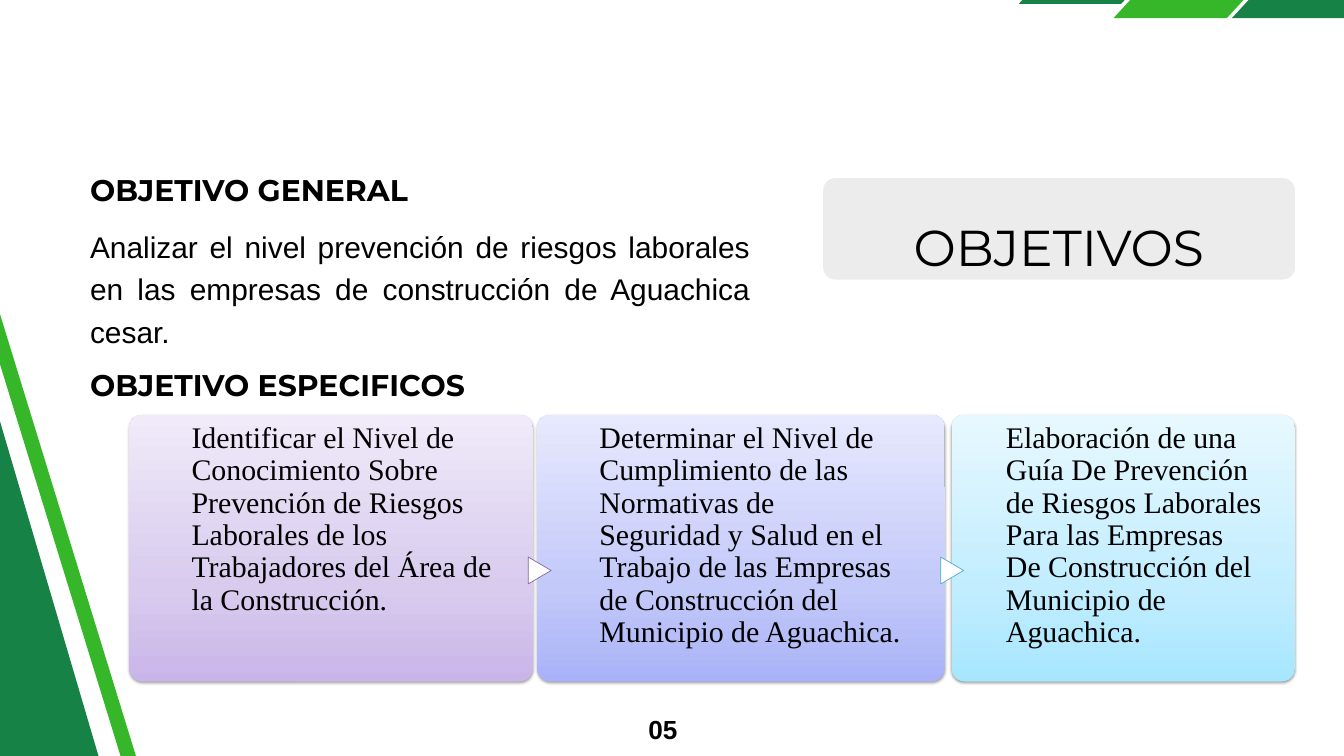
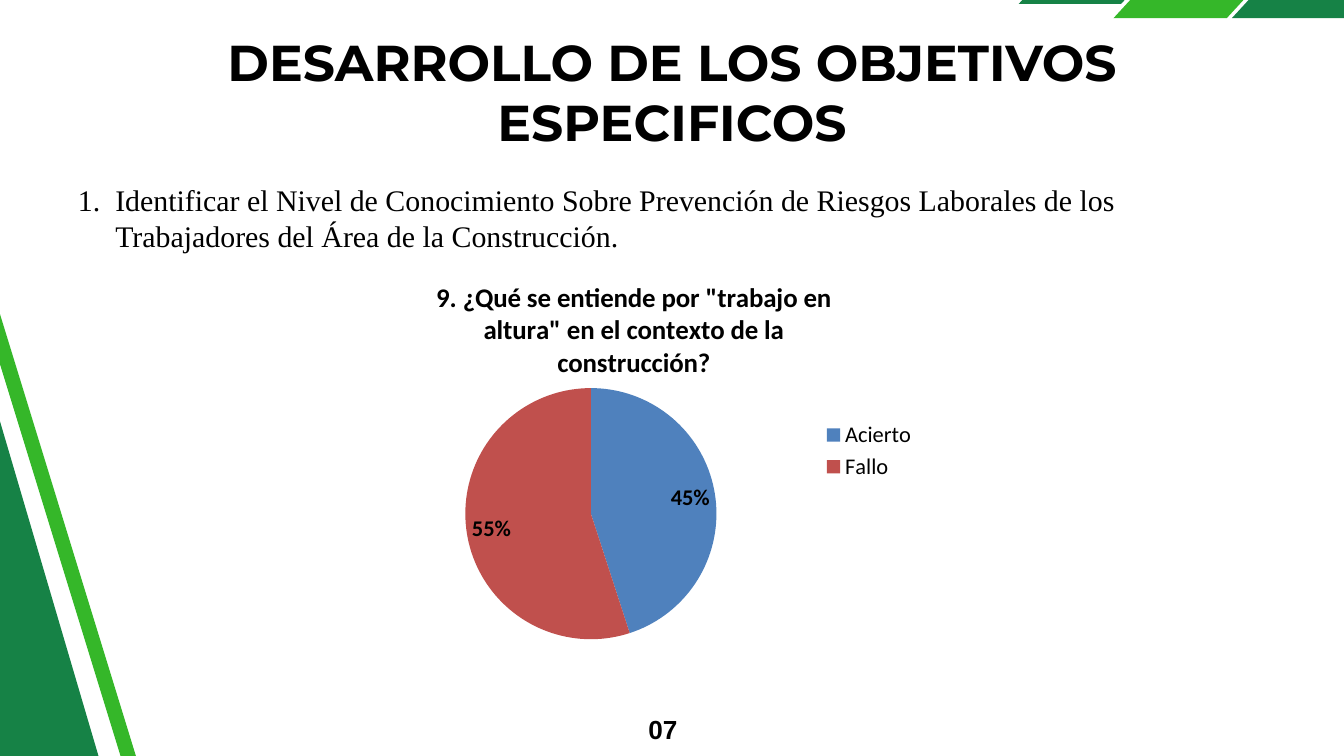
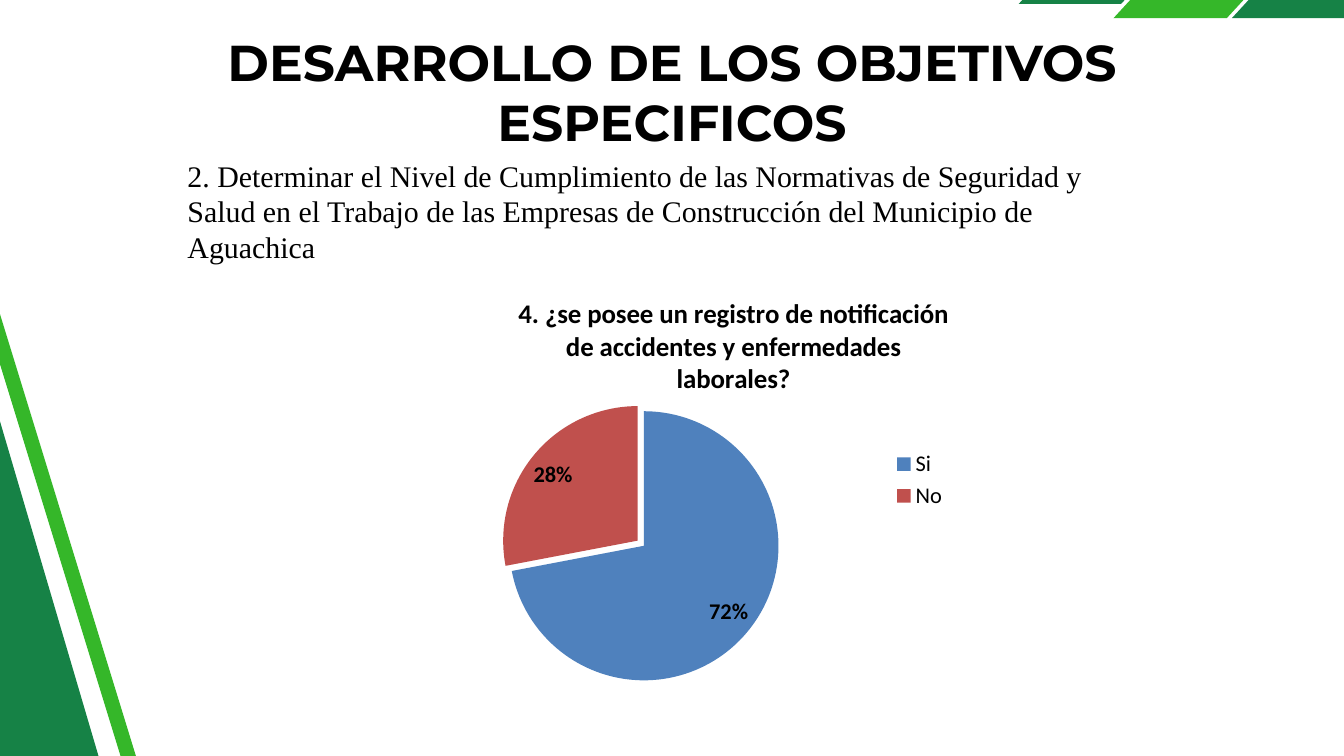
from lxml import etree
from pptx import Presentation
from pptx.chart.data import CategoryChartData
from pptx.dml.color import RGBColor
from pptx.enum import chart as charts, shapes, text
from pptx.oxml.ns import qn
from pptx.util import Pt

# Shared look
DARK_GREEN = RGBColor(0x16, 0x82, 0x46)
GREEN = RGBColor(0x35, 0xB7, 0x29)
GREY = RGBColor(0xED, 0xEC, 0xED)
BLACK = RGBColor(0, 0, 0)
WHITE = RGBColor(0xFF, 0xFF, 0xFF)
PURPLE = RGBColor(0x80, 0x64, 0xA2)
AQUA = RGBColor(0x4B, 0xAC, 0xC6)
SLICE_COLORS = [RGBColor(0x4F, 0x81, 0xBD), RGBColor(0xC0, 0x50, 0x4D)]

SHAPE = shapes.MSO_SHAPE
ALIGN = text.PP_ALIGN
TITLE = {"name": "Montserrat", "size": Pt(54), "bold": True}
PANEL_TITLE = {"name": "Montserrat", "size": Pt(54)}
HEADING = {"name": "Montserrat", "size": Pt(32), "bold": True}
BODY = {"name": "Arial", "size": Pt(32)}
SERIF = {"name": "Times New Roman", "size": Pt(32)}
PAGE_NUMBER = {"name": "Arial", "size": Pt(28), "bold": True}
CHART_TEXT = {"name": "Calibri", "size": Pt(24)}
CHART_TITLE = {"name": "Calibri", "size": Pt(28.8), "bold": True}
CHART_LABEL = {"name": "Calibri", "size": Pt(24), "bold": True}

# Decoration: shape, box, rotation, colour
BANDS = [
    (SHAPE.PARALLELOGRAM, (1091.5, -62, 170.6, 66.2), 0, DARK_GREEN),
    (SHAPE.PARALLELOGRAM, (1193, -76.3, 209.5, 95.8), 0, GREEN),
    (SHAPE.PARALLELOGRAM, (1319.8, -76.3, 209.5, 95.8), 0, DARK_GREEN),
    (SHAPE.RECTANGLE, (-726.5, 448.6, 1181.5, 360.7), 253.6, DARK_GREEN),
    (SHAPE.RECTANGLE, (-509.8, 618.5, 1181.5, 15.8), 252.9, GREEN),
]

# Content
GENERAL_GOAL = ("Analizar el nivel prevención de riesgos laborales en las empresas "
                "de construcción de Aguachica cesar.")
HEADINGS = [("OBJETIVO GENERAL", 183.6), ("OBJETIVO ESPECIFICOS", 392.4)]
CARD_TOP, CARD_HEIGHT = 444.5, 285.8
CARDS = [
    {"text": "Identificar el Nivel de Conocimiento Sobre Prevención de Riesgos "
             "Laborales de los Trabajadores del Área de la Construcción.",
     "card": (138.2, 432.7), "column": (205.2, 322.6),
     "stops": ("C9B5E8", "D8CBEE", "F0EAF9"), "marker": None},
    {"text": "Determinar el Nivel de Cumplimiento de las Normativas de Seguridad y "
             "Salud en el Trabajo de las Empresas de Construcción del Municipio "
             "de Aguachica.",
     "card": (575.3, 437), "column": (642.2, 325.4),
     "stops": ("A9B2F8", "C3C9F9", "E7E9FE"), "marker": (563.8, PURPLE)},
    {"text": "Elaboración de una Guía De Prevención de Riesgos Laborales Para las "
             "Empresas De Construcción del Municipio de Aguachica.",
     "card": (1019.5, 367.9), "column": (1077.8, 274.3),
     "stops": ("A7E6FF", "C1EDFF", "E7F8FF"), "marker": (1005.8, AQUA)},
]
RESULTS_TITLE = "DESARROLLO DE LOS OBJETIVOS ESPECIFICOS"
RESULTS = [
    {"goal": "Identificar el Nivel de Conocimiento Sobre Prevención de Riesgos "
             "Laborales de los Trabajadores del Área de la Construcción.",
     "goal_box": (83.5, 195.1, 1244.2, 77.8), "numbered": True, "page": "07",
     "question": '9. ¿Qué se entiende por "trabajo en altura" en el contexto '
                 "de la construcción?",
     "chart_box": (390.2, 272.9, 599.8, 420.5), "explosion": 0,
     "answers": [("Acierto", 0.45), ("Fallo", 0.55)],
     "title_at": {"x": 0.12, "y": 0.05},
     "plot_at": {"x": 0.18, "y": 0.34, "w": 0.45, "h": 0.64}},
    {"goal": "2. Determinar el Nivel de Cumplimiento de las Normativas de Seguridad "
             "y Salud en el Trabajo de las Empresas de Construcción del Municipio "
             "de Aguachica",
     "goal_box": (200.9, 168.5, 1038.2, 116.6), "numbered": False, "page": None,
     "question": "4. ¿se posee un registro de notificación de accidentes y "
                 "enfermedades laborales?",
     "chart_box": (416.9, 288.7, 606.2, 451.4), "explosion": 3,
     "answers": [("Si", 0.72), ("No", 0.28)],
     "title_at": {"x": 0.22, "y": 0.05},
     "plot_at": {"x": 0.2, "y": 0.32, "w": 0.49, "h": 0.66}},
]


def points(box):
    return [Pt(value) for value in box]


def style_font(font, style):
    for name, value in style.items():
        setattr(font, name, value)
    font.color.rgb = BLACK


def add_child(parent, tag, **attributes):
    child = etree.SubElement(parent, qn(tag))
    for name, value in attributes.items():
        child.set(name, str(value))
    return child


def add_text(slide, content, box, style, top_inset=0, numbered=False, **layout):
    frame = slide.shapes.add_textbox(*points(box)).text_frame
    frame.word_wrap = True
    frame.margin_left = frame.margin_right = frame.margin_bottom = 0
    frame.margin_top = Pt(top_inset)
    paragraph = frame.paragraphs[0]
    for name, value in layout.items():
        setattr(paragraph, name, value)
    if numbered:
        properties = paragraph._p.get_or_add_pPr()
        properties.set("marL", str(Pt(40)))
        properties.set("indent", str(-Pt(40)))
        add_child(properties, "a:buFont", typeface="+mj-lt")
        add_child(properties, "a:buAutoNum", type="arabicPeriod")
    run = paragraph.add_run()
    run.text = content
    style_font(run.font, style)


def add_shape(slide, kind, box, fill=None, line=None, rotation=0, corner=None):
    shape = slide.shapes.add_shape(kind, *points(box))
    shape.rotation = rotation
    shape.shadow.inherit = False
    if corner is not None:
        shape.adjustments[0] = corner
    if fill is not None:
        shape.fill.solid()
        shape.fill.fore_color.rgb = fill
    if line is None:
        shape.line.fill.background()
    else:
        shape.line.color.rgb = line
        shape.line.width = Pt(0.75)
    return shape


def add_card(slide, box, stops):
    """Rounded card with an upward gradient and a soft shadow."""
    shape = add_shape(slide, SHAPE.ROUNDED_RECTANGLE, box, corner=0.05)
    properties = shape._element.spPr
    gradient = etree.Element(qn("a:gradFill"), rotWithShape="1")
    stop_list = add_child(gradient, "a:gsLst")
    for position, color in zip((0, 35000, 100000), stops):
        stop = add_child(stop_list, "a:gs", pos=position)
        add_child(stop, "a:srgbClr", val=color)
    add_child(gradient, "a:lin", ang=270 * 60000, scaled=1)
    properties.find(qn("a:prstGeom")).addnext(gradient)
    shadow = add_child(properties.find(qn("a:effectLst")), "a:outerShdw",
                       blurRad=Pt(3.1), dist=Pt(1.6), dir=90 * 60000, rotWithShape=0)
    add_child(add_child(shadow, "a:srgbClr", val="000000"), "a:alpha", val=38000)


def place_in_chart(parent, place, inner=False):
    layout = parent.find(qn("c:layout"))
    if layout is None:
        layout = etree.Element(qn("c:layout"))
        parent.insert(0, layout)
    manual = add_child(layout, "c:manualLayout")
    if inner:
        add_child(manual, "c:layoutTarget", val="inner")
    for side in "xy":
        add_child(manual, f"c:{side}Mode", val="edge")
    for side, value in place.items():
        add_child(manual, f"c:{side}", val=value)


def add_pie(slide, result):
    data = CategoryChartData(number_format="0%")
    data.categories = [answer for answer, _ in result["answers"]]
    data.add_series("Series 1", [share for _, share in result["answers"]])
    chart = slide.shapes.add_chart(charts.XL_CHART_TYPE.PIE,
                                   *points(result["chart_box"]), data).chart
    style_font(chart.font, CHART_TEXT)

    # Title and plot area
    chart.has_title = True
    run = chart.chart_title.text_frame.paragraphs[0].add_run()
    run.text = result["question"]
    style_font(run.font, CHART_TITLE)
    title = chart.chart_title._element
    place_in_chart(title, result["title_at"])
    place_in_chart(title.getparent().find(qn("c:plotArea")), result["plot_at"], inner=True)

    # Legend
    chart.has_legend = True
    chart.legend.position = charts.XL_LEGEND_POSITION.RIGHT
    chart.legend.include_in_layout = False
    style_font(chart.legend.font, CHART_TEXT)

    # Slices and labels
    plot = chart.plots[0]
    plot.vary_by_categories = True
    series = plot.series[0]
    for index, color in enumerate(SLICE_COLORS):
        fill = series.points[index].format.fill
        fill.solid()
        fill.fore_color.rgb = color
    if result["explosion"]:
        explosion = etree.Element(qn("c:explosion"), val=str(result["explosion"]))
        series._element.find(qn("c:dPt")).addprevious(explosion)
    labels = series.data_labels
    labels.show_value = True
    labels.number_format = "0%"
    labels.number_format_is_linked = False
    labels.position = charts.XL_LABEL_POSITION.BEST_FIT
    style_font(labels.font, CHART_LABEL)


def add_slide(presentation, page=None):
    slide = presentation.slides.add_slide(presentation.slide_layouts[6])
    for kind, box, rotation, color in BANDS:
        corner = 0.92 if kind == SHAPE.PARALLELOGRAM else None
        add_shape(slide, kind, box, color, rotation=rotation, corner=corner)
    if page:
        add_text(slide, page, (685.4, 758.9, 40.3, 36), PAGE_NUMBER,
                 alignment=ALIGN.RIGHT, line_spacing=Pt(39.2))
    return slide


def add_goals_slide(presentation):
    slide = add_slide(presentation, "05")
    add_shape(slide, SHAPE.ROUNDED_RECTANGLE, (882, 190.8, 505.4, 108.7), GREY, corner=0.12)
    add_text(slide, "OBJETIVOS", (934.6, 186.5, 399.6, 110.9), PANEL_TITLE,
             alignment=ALIGN.CENTER, line_spacing=Pt(110))
    for heading, top in HEADINGS:
        add_text(slide, heading, (96.5, top, 553, 39), HEADING, alignment=ALIGN.JUSTIFY)
    add_text(slide, GENERAL_GOAL, (96.5, 238.3, 707.8, 132.5), BODY,
             alignment=ALIGN.JUSTIFY, line_spacing=Pt(45.3))
    for card in CARDS:
        left, width = card["card"]
        add_card(slide, (left, CARD_TOP, width, CARD_HEIGHT), card["stops"])
        if card["marker"]:
            marker_left, color = card["marker"]
            add_shape(slide, SHAPE.FLOWCHART_EXTRACT, (marker_left, 599, 28.8, 24.5),
                      WHITE, color, rotation=90)
        left, width = card["column"]
        add_text(slide, card["text"], (left, CARD_TOP, width, CARD_HEIGHT), SERIF,
                 top_inset=8.6, line_spacing=0.9)


def add_result_slide(presentation, result):
    slide = add_slide(presentation, result["page"])
    add_text(slide, RESULTS_TITLE, (218.9, 33.1, 1002.2, 131), TITLE, alignment=ALIGN.CENTER)
    add_text(slide, result["goal"], result["goal_box"], SERIF, numbered=result["numbered"])
    add_pie(slide, result)


def main():
    presentation = Presentation()
    presentation.slide_width, presentation.slide_height = Pt(1440), Pt(810)
    add_goals_slide(presentation)
    for result in RESULTS:
        add_result_slide(presentation, result)
    presentation.save("out.pptx")


if __name__ == "__main__":
    main()
